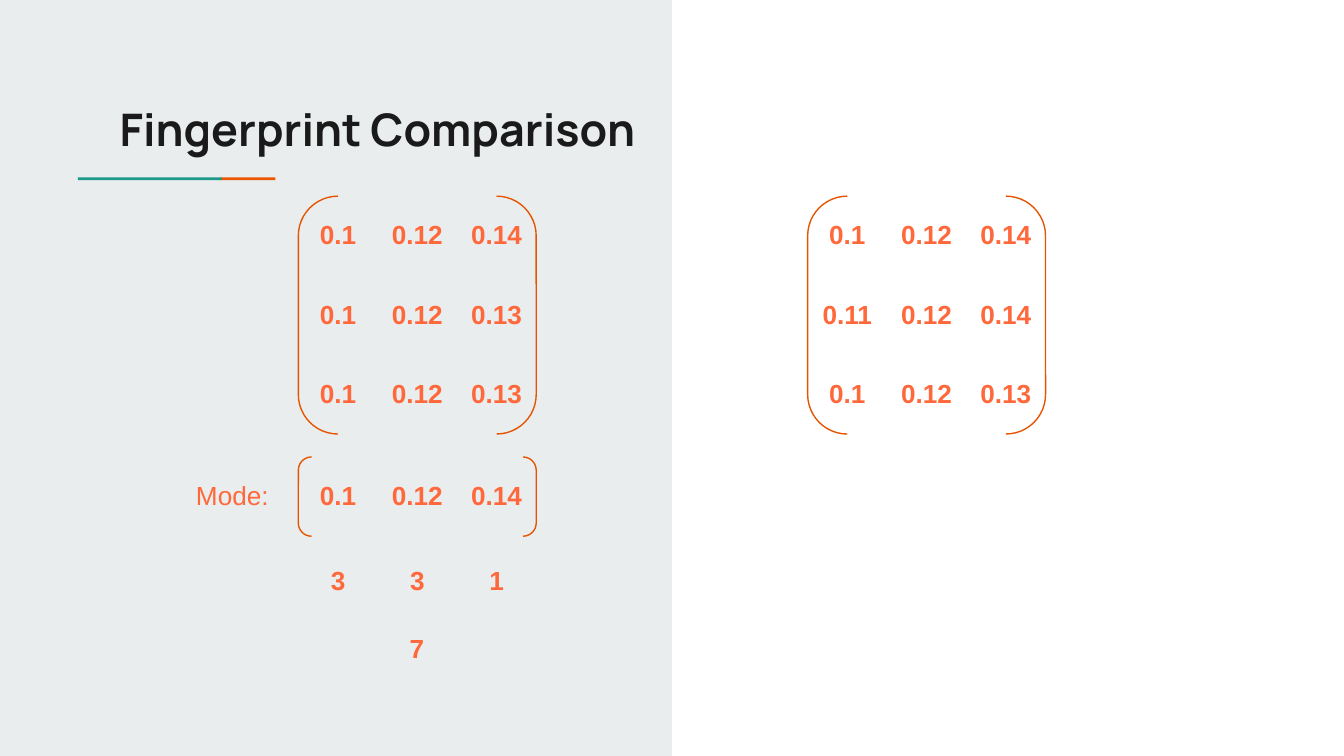
from dataclasses import dataclass

from lxml import etree
from pptx import Presentation
from pptx.dml.color import RGBColor
from pptx.enum.shapes import MSO_SHAPE
from pptx.enum.text import MSO_ANCHOR, PP_ALIGN
from pptx.oxml.ns import qn
from pptx.util import Inches, Pt

RECT = MSO_SHAPE.RECTANGLE
BRACKET = MSO_SHAPE.DOUBLE_BRACKET
MIDDLE = MSO_ANCHOR.MIDDLE
CENTER = PP_ALIGN.CENTER
LEFT = PP_ALIGN.LEFT
WIDTH = 10
HEIGHT = WIDTH * 9 / 16
CELL = 0.59


@dataclass(frozen=True)
class Theme:
    panel: str = "E9EDEE"
    teal: str = "1A9988"
    orange: str = "EB5600"
    line: str = "E65400"
    text: str = "FF683A"
    title: str = "1A1A1A"
    head: str = "Manrope"
    body: str = "Arial"
    big: int = 24
    small: int = 14


@dataclass(frozen=True)
class Bar:
    left: float
    top: float
    width: float
    height: float
    color: str


@dataclass(frozen=True)
class Matrix:
    left: float
    top: float
    rows: tuple[str, ...]
    framed: bool = True


@dataclass(frozen=True)
class Label:
    left: float
    top: float
    width: float
    text: str
    bold: bool


THEME = Theme()
BARS = (
    Bar(0, 0, WIDTH / 2, HEIGHT, THEME.panel),
    Bar(1.64, 1.32, 0.41, 0.02, THEME.orange),
    Bar(0.58, 1.32, 1.07, 0.02, THEME.teal),
)
GRIDS = (
    Matrix(2.22, 1.46, ("0.1 0.12 0.14", "0.1 0.12 0.13", "0.1 0.12 0.13")),
    Matrix(6.01, 1.46, ("0.1 0.12 0.14", "0.11 0.12 0.14", "0.1 0.12 0.13")),
    Matrix(2.22, 3.4, ("0.1 0.12 0.14",)),
    Matrix(2.22, 4.03, ("3 3 1",), False),
)
LABELS = (
    Label(1.36, 3.52, 0.75, "Mode:", False),
    Label(2.95, 4.66, 0.31, "7", True),
)


def style(frame, align, face: str, size: int, color: str, bold: bool) -> None:
    for para in frame.paragraphs:
        para.alignment = align
        for run in para.runs:
            run.font.name = face
            run.font.size = Pt(size)
            run.font.bold = bold
            run.font.color.rgb = RGBColor.from_string(color)


def draw_title(slide, text: str):
    title = slide.shapes.title
    title.left, title.top = Inches(0.79), Inches(0.64)
    title.width, title.height = Inches(4.21), Inches(0.64)
    frame = title.text_frame
    frame.text = text
    frame.word_wrap = True
    frame.vertical_anchor = MIDDLE
    frame.margin_left = frame.margin_right = Inches(0.1)
    frame.margin_top = frame.margin_bottom = Inches(0.1)
    style(frame, LEFT, THEME.head, THEME.big, THEME.title, True)
    return title


def draw_bar(slide, bar: Bar):
    shape = slide.shapes.add_shape(
        RECT, Inches(bar.left), Inches(bar.top),
        Inches(bar.width), Inches(bar.height))
    shape.shadow.inherit = False
    shape.fill.solid()
    shape.fill.fore_color.rgb = RGBColor.from_string(bar.color)
    shape.line.fill.background()
    return shape


def clear_cell(cell) -> None:
    props = cell._tc.get_or_add_tcPr()
    for side in ("lnL", "lnR", "lnT", "lnB"):
        edge = etree.SubElement(props, qn(f"a:{side}"))
        etree.SubElement(edge, qn("a:noFill"))
    cell.fill.background()


def draw_grid(slide, grid: Matrix) -> None:
    values = [row.split() for row in grid.rows]
    box = (Inches(grid.left), Inches(grid.top),
           Inches(CELL * len(values[0])), Inches(CELL * len(values)))
    table = slide.shapes.add_table(len(values), len(values[0]), *box).table
    table.first_row = table.horz_banding = False
    for row, texts in zip(table.rows, values):
        for cell, text in zip(row.cells, texts):
            clear_cell(cell)
            cell.vertical_anchor = MIDDLE
            cell.text_frame.text = text
            style(cell.text_frame, CENTER, THEME.body, THEME.small,
                  THEME.text, True)
    if grid.framed:
        frame = slide.shapes.add_shape(BRACKET, *box)
        frame.shadow.inherit = False
        frame.fill.background()
        frame.line.color.rgb = RGBColor.from_string(THEME.line)
        frame.line.width = Pt(0.75)


def draw_label(slide, label: Label) -> None:
    box = slide.shapes.add_textbox(
        Inches(label.left), Inches(label.top),
        Inches(label.width), Inches(0.34))
    box.text_frame.text = label.text
    box.text_frame.word_wrap = False
    style(box.text_frame, LEFT, THEME.body, THEME.small,
          THEME.text, label.bold)


def main() -> None:
    deck = Presentation()
    deck.slide_width, deck.slide_height = Inches(WIDTH), Inches(HEIGHT)
    slide = deck.slides.add_slide(deck.slide_layouts[5])
    title = draw_title(slide, "Fingerprint Comparison")
    for bar in BARS:
        title.element.addprevious(draw_bar(slide, bar).element)
    for grid in GRIDS:
        draw_grid(slide, grid)
    for label in LABELS:
        draw_label(slide, label)
    deck.save("out.pptx")


if __name__ == "__main__":
    main()
